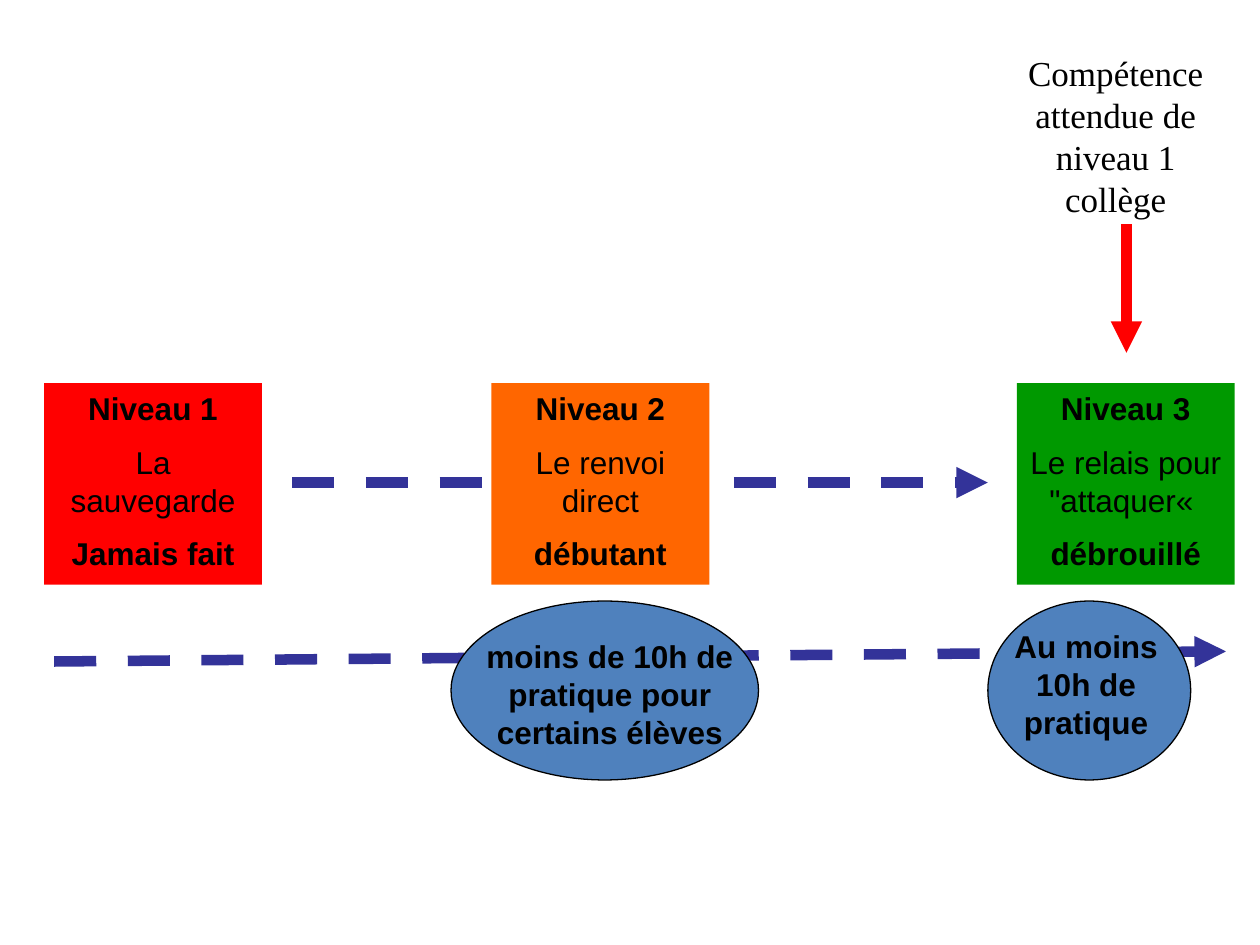
import pptx
import pptx.util
import pptx.dml.color
import pptx.enum.dml
import pptx.enum.shapes
import pptx.enum.text
import pptx.oxml
import pptx.oxml.ns

Inches = pptx.util.Inches
Pt = pptx.util.Pt
RGBColor = pptx.dml.color.RGBColor
SHAPES = pptx.enum.shapes.MSO_SHAPE

BLACK = RGBColor(0x00, 0x00, 0x00)
RED = RGBColor(0xFF, 0x00, 0x00)
ORANGE = RGBColor(0xFF, 0x66, 0x00)
GREEN = RGBColor(0x00, 0x99, 0x00)
INDIGO = RGBColor(0x33, 0x33, 0x99)
BLUE = RGBColor(0x4F, 0x81, 0xBD)


def write_text(box, lines, font="Arial", size=18):
    frame = box.text_frame
    frame.word_wrap = True
    frame.auto_size = pptx.enum.text.MSO_AUTO_SIZE.SHAPE_TO_FIT_TEXT
    frame.vertical_anchor = pptx.enum.text.MSO_ANCHOR.TOP
    frame.text = "\n".join(text for text, bold in lines)
    for index, (para, (text, bold)) in enumerate(zip(frame.paragraphs, lines)):
        para.alignment = pptx.enum.text.PP_ALIGN.CENTER
        para.space_before = Pt(size / 2 if index else 0)
        for span in para.runs:
            span.font.name = font
            span.font.size = Pt(size)
            span.font.bold = bold
            span.font.color.rgb = BLACK


def add_arrow(page, start, end, color, dashed):
    arrow = page.shapes.add_connector(
        pptx.enum.shapes.MSO_CONNECTOR.STRAIGHT,
        Inches(start[0]), Inches(start[1]), Inches(end[0]), Inches(end[1]))
    arrow.line.color.rgb = color
    arrow.line.width = Pt(6)
    if dashed:
        arrow.line.dash_style = pptx.enum.dml.MSO_LINE.DASH
    head = pptx.oxml.parse_xml(
        '<a:tailEnd %s type="triangle"/>' % pptx.oxml.ns.nsdecls("a"))
    arrow.line._get_or_add_ln().append(head)
    properties = arrow._element.spPr
    properties.append(pptx.oxml.parse_xml(
        "<a:effectLst %s/>" % pptx.oxml.ns.nsdecls("a")))


deck = pptx.Presentation()
deck.slide_width = Inches(10)
deck.slide_height = Inches(7.5)
page = deck.slides.add_slide(deck.slide_layouts[6])

add_arrow(page, (2.32, 3.83), (7.84, 3.83), INDIGO, True)

levels = [
    (0.35, RED, "Niveau 1", "La sauvegarde", "Jamais fait"),
    (3.9, ORANGE, "Niveau 2", "Le renvoi direct", "débutant"),
    (8.07, GREEN, "Niveau 3", 'Le relais pour "attaquer« ', "débrouillé"),
]
for left, color, title, skill, stage in levels:
    box = page.shapes.add_shape(
        SHAPES.RECTANGLE, Inches(left), Inches(3.04), Inches(1.73), Inches(1.6))
    box.shadow.inherit = False
    box.fill.solid()
    box.fill.fore_color.rgb = color
    box.line.fill.background()
    write_text(box, [(title, True), (skill, False), (stage, True)])

goal = page.shapes.add_textbox(
    Inches(7.99), Inches(0.36), Inches(1.73), Inches(1.43))
write_text(goal, [("Compétence attendue de niveau 1 collège", False)],
           "Times New Roman", 20)
add_arrow(page, (8.94, 1.78), (8.94, 2.8), RED, False)
add_arrow(page, (0.43, 5.25), (9.73, 5.17), INDIGO, True)

practices = [
    (3.58, 2.44, 3.5, 5.01, 2.68, "moins de 10h de pratique pour certains élèves"),
    (7.84, 1.61, 7.91, 4.93, 1.42, "Au moins 10h de pratique"),
]
for left, width, text_left, text_top, text_width, text in practices:
    oval = page.shapes.add_shape(
        SHAPES.OVAL, Inches(left), Inches(4.77), Inches(width), Inches(1.42))
    oval.shadow.inherit = False
    oval.fill.solid()
    oval.fill.fore_color.rgb = BLUE
    oval.line.color.rgb = BLACK
    oval.line.width = Pt(0.75)
    label = page.shapes.add_textbox(
        Inches(text_left), Inches(text_top), Inches(text_width), Inches(1))
    write_text(label, [(text, True)])

deck.save("out.pptx")
